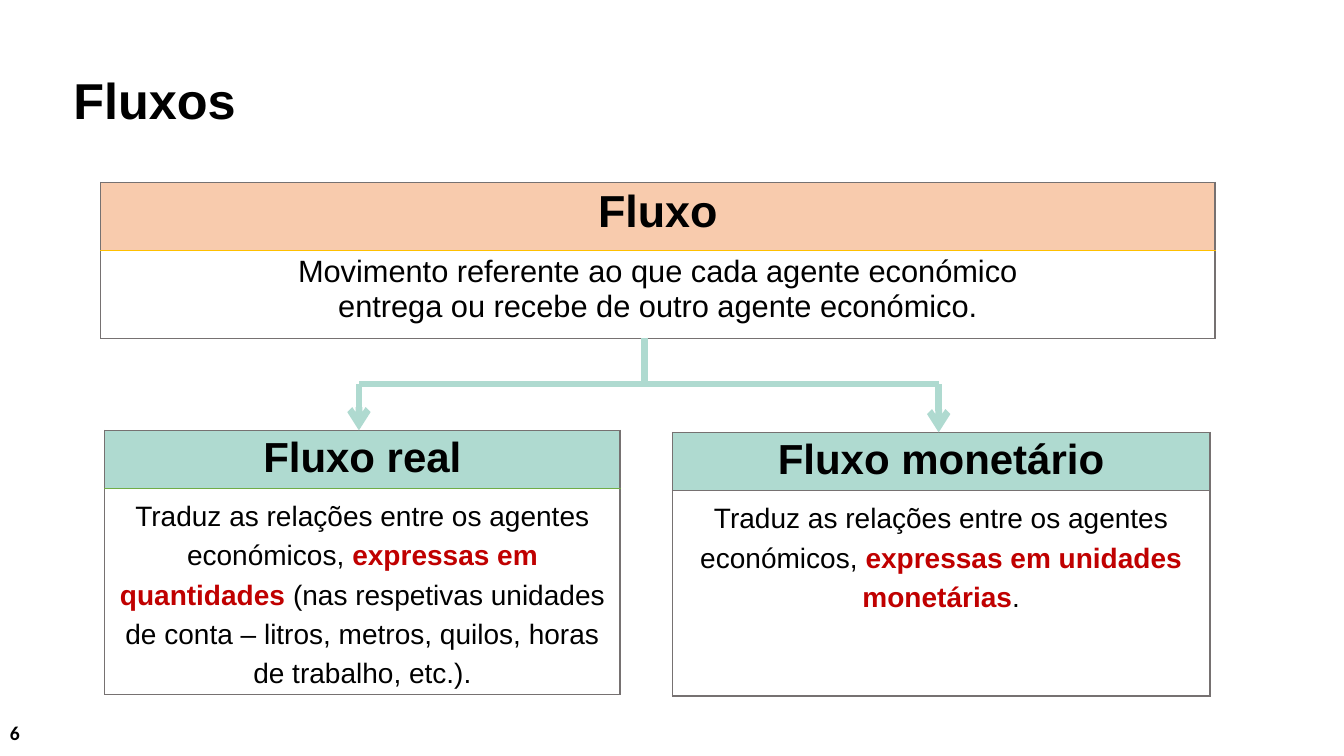
from lxml import etree
from pptx import Presentation
from pptx.dml.color import RGBColor
from pptx.enum.shapes import MSO_CONNECTOR
from pptx.enum.text import MSO_ANCHOR, PP_ALIGN
from pptx.oxml.ns import qn
from pptx.util import Inches, Pt

STRAIGHT = MSO_CONNECTOR.STRAIGHT
TOP = MSO_ANCHOR.TOP
CENTER = PP_ALIGN.CENTER

BLACK, RED, GREY = "000000", "C00000", "767171"
PEACH, MINT, GOLD, GREEN = "F8CBAD", "AFDAD0", "FFC000", "70AD47"


def color(hex_code):
    return RGBColor.from_string(hex_code)


class FlowSlide:
    """Style and current slide; lengths are units of a 0.1 inch grid."""

    font = "Arial"

    def __init__(self, deck):
        self.slide = deck.slides.add_slide(deck.slide_layouts[6])

    def grid(self, *units):
        return [Inches(unit / 10) for unit in units]

    def add_runs(self, paragraph, runs, size, font=None):
        for words, hex_code, bold in runs:
            run = paragraph.add_run()
            run.text = words
            run.font.name = font or self.font
            run.font.size = Pt(size)
            run.font.bold = bold
            run.font.color.rgb = color(hex_code)

    def text(self, box, words, size, font=None, spacing=None):
        frame = self.slide.shapes.add_textbox(*self.grid(*box)).text_frame
        frame.word_wrap = True
        frame.vertical_anchor = TOP
        frame.paragraphs[0].line_spacing = spacing
        self.add_runs(frame.paragraphs[0], [(words, BLACK, True)], size, font)

    def border(self, cell, sides):
        properties = cell._tc.get_or_add_tcPr()
        for place, (side, (hex_code, width)) in enumerate(zip("LRTB", sides)):
            line = etree.Element(qn(f"a:ln{side}"), w=str(Pt(width)))
            fill = etree.SubElement(line, qn("a:solidFill"))
            etree.SubElement(fill, qn("a:srgbClr"), val=hex_code)
            properties.insert(place, line)

    def card(self, box, heading, body, header_height, header_fill,
             heading_size, body_size, divider, spacing=None):
        left, top, width, height = box
        table = self.slide.shapes.add_table(2, 1, *self.grid(*box)).table
        table.first_row = table.horz_banding = False
        table.rows[0].height, table.rows[1].height = self.grid(
            header_height, height - header_height)
        header_cell, body_cell = table.cell(0, 0), table.cell(1, 0)
        outer = (GREY, 1)

        # Heading row
        header_cell.fill.solid()
        header_cell.fill.fore_color.rgb = color(header_fill)
        header_cell.margin_top, header_cell.margin_bottom = self.grid(0.45, 0.3)
        self.border(header_cell, [outer, outer, outer, divider])
        title = header_cell.text_frame.paragraphs[0]
        title.alignment = CENTER
        self.add_runs(title, [(heading, BLACK, True)], heading_size)

        # Definition row, one paragraph per list of runs
        body_cell.fill.background()
        self.border(body_cell, [outer, outer, divider, outer])
        frame = body_cell.text_frame
        for index, runs in enumerate(body):
            paragraph = frame.add_paragraph() if index else frame.paragraphs[0]
            paragraph.alignment = CENTER
            paragraph.line_spacing = spacing
            self.add_runs(paragraph, runs, body_size)

    def line(self, start, end, arrow=False):
        connector = self.slide.shapes.add_connector(
            STRAIGHT, *self.grid(*start, *end))
        connector.line.color.rgb = color(MINT)
        connector.line.width = Pt(4.75)
        if arrow:
            etree.SubElement(connector.line._get_or_add_ln(),
                             qn("a:tailEnd"), type="arrow")
        etree.SubElement(connector._element.spPr, qn("a:effectLst"))


def main():
    deck = Presentation()
    deck.slide_width, deck.slide_height = Inches(13.33), Inches(7.5)
    page = FlowSlide(deck)

    # Title and page number
    page.text((6.3, 7, 122.4, 10.5), "Fluxos", 36, spacing=0.9)
    page.text((0, 71, 30, 4), "6", 14, font="Calibri")

    # General concept
    definition = [
        [("Movimento referente ao que cada agente económico", BLACK, False)],
        [("entrega ou recebe de outro agente económico.", BLACK, False)],
    ]
    page.card((10, 18.1, 110.5, 15.5), "Fluxo", definition, 6.7, PEACH,
              32, 22, (GOLD, 0.5))

    # Two kinds of flow
    opening = "Traduz as relações entre os agentes económicos, "
    kinds = [
        ((10.4, 42.7, 51.1, 26.1), "Fluxo real", "expressas em quantidades ",
         "(nas respetivas unidades de conta – litros, metros, quilos, "
         "horas de trabalho, etc.).", (GREEN, 0.5)),
        ((66.7, 42.9, 53.3, 26.1), "Fluxo monetário",
         "expressas em unidades monetárias", ".", (GREY, 1)),
    ]
    for box, heading, emphasis, ending, divider in kinds:
        body = [[(opening, BLACK, False), (emphasis, RED, True),
                 (ending, BLACK, False)]]
        page.card(box, heading, body, 5.7, MINT, 30, 20, divider, Pt(28))

    # Branching arrows
    trunk, fork = 63.9, 38.1
    page.line((trunk, 33.5), (trunk, fork))
    for branch, tip in ((35.6, 42.7), (93.1, 42.9)):
        page.line((trunk, fork), (branch, fork))
        page.line((branch, fork), (branch, tip), arrow=True)

    deck.save("out.pptx")


if __name__ == "__main__":
    main()
